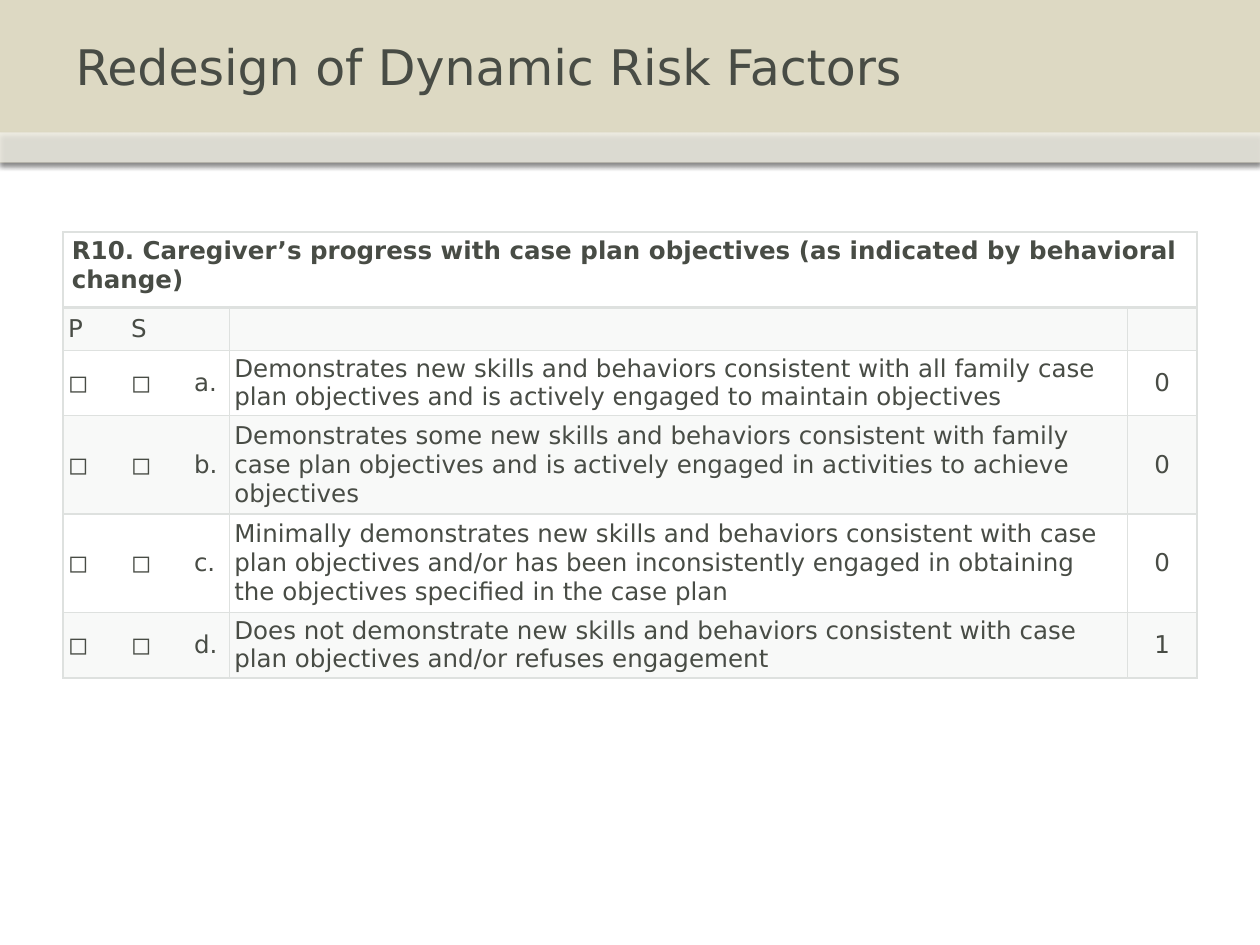
from lxml import etree
from pptx import Presentation
from pptx import util as u
from pptx.dml import color
from pptx.enum import text
from pptx.enum import shapes
from pptx.oxml import ns

Inches = u.Inches
FONT = "DejaVu Sans"
COLORS = {"ink": "484C45", "sand": "DDD9C3", "rule": "DEE1DF",
          "white": "FFFFFF", "shadow": "000000"}
COLUMNS = [1.32, 7.13, 0.55]
ROWS = [0.6, 0.34, 0.52, 0.78, 0.78, 0.52]
HEADING = ("R10. Caregiver’s progress with case plan objectives "
           "(as indicated by behavioral change)")
FACTORS = [
    ("a.", "Demonstrates new skills and behaviors consistent with all family case "
     "plan objectives and is actively engaged to maintain objectives", "0"),
    ("b.", "Demonstrates some new skills and behaviors consistent with family case "
     "plan objectives and is actively engaged in activities to achieve objectives", "0"),
    ("c.", "Minimally demonstrates new skills and behaviors consistent with case plan "
     "objectives and/or has been inconsistently engaged in obtaining the objectives "
     "specified in the case plan", "0"),
    ("d.", "Does not demonstrate new skills and behaviors consistent with case plan "
     "objectives and/or refuses engagement", "1"),
]


def rgb(name):
    return color.RGBColor.from_string(COLORS[name])


def add_node(parent, tag, **attributes):
    values = {key: str(value) for key, value in attributes.items()}
    return etree.SubElement(parent, ns.qn(tag), values)


def add_color(parent, name, alpha=100):
    node = add_node(parent, "a:srgbClr", val=COLORS[name])
    if alpha < 100:
        add_node(node, "a:alpha", val=alpha * 1000)


def solid_fill(fill, name, alpha=100):
    fill.solid()
    fill.fore_color.rgb = rgb(name)
    if alpha < 100:
        node = fill._xPr.find(".//" + ns.qn("a:srgbClr"))
        add_node(node, "a:alpha", val=alpha * 1000)


def style_paragraph(para, size, align=text.PP_ALIGN.LEFT, bold=False):
    para.alignment = align
    para.font.name = FONT
    para.font.size = u.Pt(size)
    para.font.bold = bold
    para.font.color.rgb = rgb("ink")


def add_band(page, left, top, width, height, fill, alpha=100):
    band = page.shapes.add_shape(shapes.MSO_SHAPE.RECTANGLE, Inches(left),
                                 Inches(top), Inches(width), Inches(height))
    solid_fill(band.fill, fill, alpha)
    band.line.fill.background()
    band.shadow.inherit = False
    effects = band.element.spPr.find(ns.qn("a:effectLst"))
    shadow = add_node(effects, "a:outerShdw", blurRad=u.Pt(3.1), dist=u.Pt(1.8),
                      dir=90 * 60000, rotWithShape=0)
    add_color(shadow, "shadow", 35)


def build_header(page, left, top, width, height):
    strip = 0.24
    add_band(page, left, top, width, height, "sand")
    add_band(page, left, top + height - strip, width, strip, "white", 53)
    title = page.shapes.title
    title.left, title.top = Inches(left + 0.5), Inches(top)
    title.width, title.height = Inches(width - 1), Inches(height - strip)
    frame = title.text_frame
    frame.text = "Redesign of Dynamic Risk Factors"
    frame.vertical_anchor = text.MSO_ANCHOR.MIDDLE
    style_paragraph(frame.paragraphs[0], 28)
    title.element.getparent().append(title.element)


def set_borders(cell, bottom):
    properties = cell._tc.get_or_add_tcPr()
    widths = {"L": 1, "R": 1, "T": 1, "B": bottom}
    for position, (side, width) in enumerate(widths.items()):
        line = add_node(properties, f"a:ln{side}", w=u.Pt(width))
        add_color(add_node(line, "a:solidFill"), "rule")
        properties.insert(position, line)


def fill_cell(cell, words, align, row):
    heading = row == 0
    cell.text = words
    side, edge = (0.07, 0.04) if heading else (0.04, 0)
    cell.margin_left = cell.margin_right = Inches(side)
    cell.margin_top = cell.margin_bottom = Inches(edge)
    cell.vertical_anchor = text.MSO_ANCHOR.TOP if heading else text.MSO_ANCHOR.MIDDLE
    style_paragraph(cell.text_frame.paragraphs[0], 14, align, heading)
    if row % 2:
        solid_fill(cell.fill, "rule", 20)
    else:
        cell.fill.background()
    set_borders(cell, 2 if heading else 1)


def set_tabs(para):
    properties = para._p.get_or_add_pPr()
    tabs = add_node(properties, "a:tabLst")
    for stop in (0.5, 1):
        add_node(tabs, "a:tab", pos=Inches(stop), algn="l")
    properties.find(ns.qn("a:defRPr")).addprevious(tabs)


def build_table(page, left, top, width, height):
    table = page.shapes.add_table(len(ROWS), len(COLUMNS), Inches(left), Inches(top),
                                  Inches(width), Inches(height)).table
    table.first_row = table.horz_banding = False
    for column, size in zip(table.columns, COLUMNS):
        column.width = Inches(size)
    for row, size in zip(table.rows, ROWS):
        row.height = Inches(size)
    content = [(HEADING, "", ""), ("P\tS", "", "")]
    content += [(f"◻\t◻\t{letter}", words, score) for letter, words, score in FACTORS]
    aligns = [text.PP_ALIGN.JUSTIFY, text.PP_ALIGN.LEFT, text.PP_ALIGN.CENTER]
    for row, values in enumerate(content):
        for column, (words, align) in enumerate(zip(values, aligns)):
            cell = table.cell(row, column)
            fill_cell(cell, words, align if row else text.PP_ALIGN.LEFT, row)
            if row and column == 0:
                set_tabs(cell.text_frame.paragraphs[0])
    table.cell(0, 0).merge(table.cell(0, 2))


def main():
    deck = Presentation()
    deck.slide_width, deck.slide_height = Inches(10), Inches(7.5)
    page = deck.slides.add_slide(deck.slide_layouts[5])
    solid_fill(page.background.fill, "white")
    build_header(page, 0, 0, 10, 1.29)
    build_table(page, 0.5, 1.84, sum(COLUMNS), sum(ROWS))
    deck.save("out.pptx")


if __name__ == "__main__":
    main()
